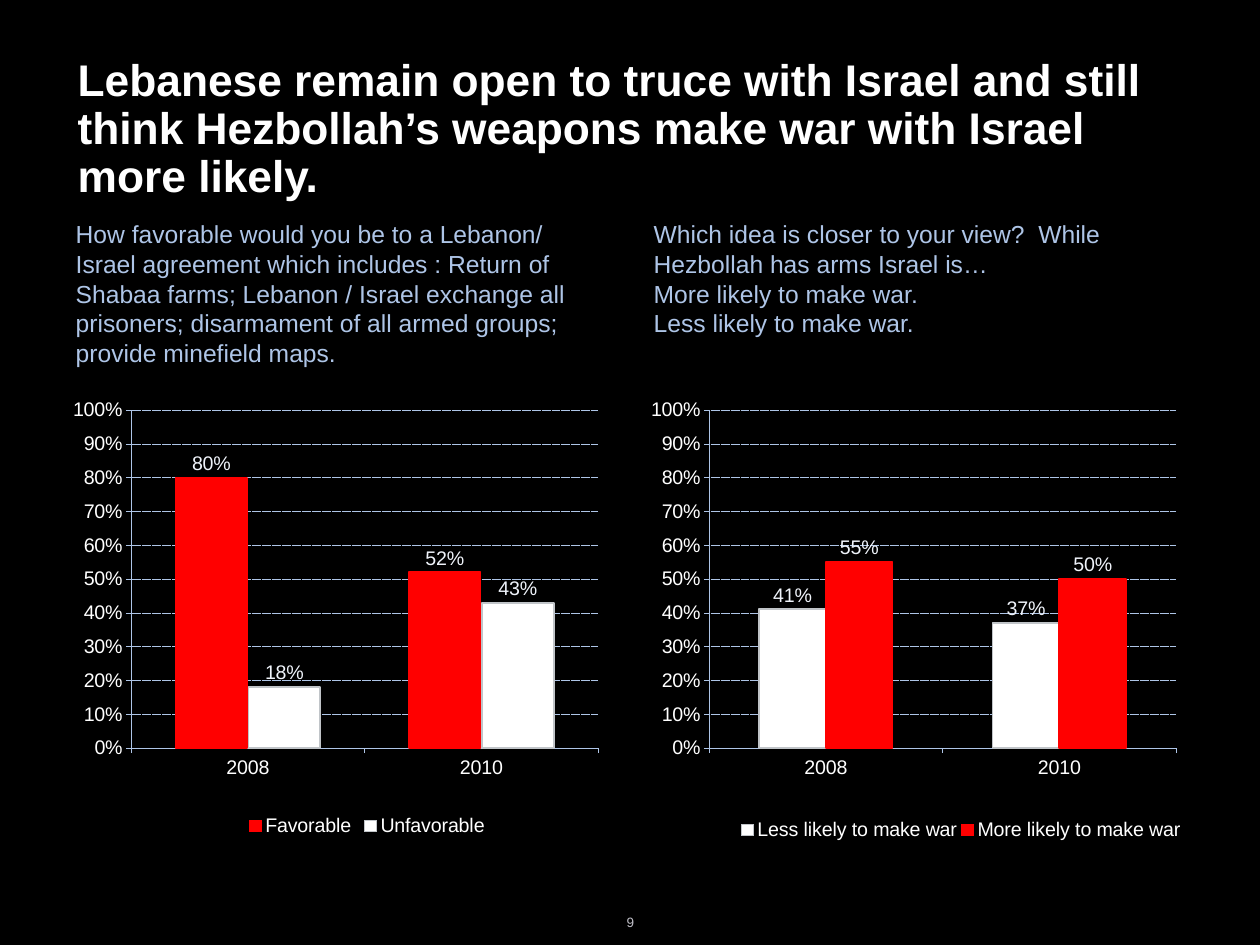
from dataclasses import dataclass

from lxml.etree import SubElement
from pptx import Presentation
from pptx.chart.data import CategoryChartData
from pptx.dml.color import RGBColor
from pptx.enum.chart import (XL_CHART_TYPE, XL_LABEL_POSITION, XL_LEGEND_POSITION,
                             XL_TICK_LABEL_POSITION, XL_TICK_MARK)
from pptx.enum.dml import MSO_LINE
from pptx.enum.text import PP_ALIGN
from pptx.oxml.ns import qn
from pptx.util import Pt

EMU_PER_PX = 10320


@dataclass(frozen=True)
class Theme:
    font: str = "Arial"
    background: str = "000000"
    white: str = "FFFFFF"
    red: str = "FF0000"
    pale_blue: str = "AEC5E7"
    white_outline: str = "C0C4C8"
    label: str = "EFF3FA"
    page_number: str = "BFBEC7"
    title_size: int = 36
    question_size: int = 20
    chart_size: int = 16
    page_size: int = 11


THEME = Theme()
OUTLINES = {THEME.white: THEME.white_outline, THEME.red: THEME.red}


def px(length):
    return int(length * EMU_PER_PX)


def style_font(font, size, color, bold=False):
    font.name = THEME.font
    font.size = Pt(size)
    font.bold = bold
    font.color.rgb = RGBColor.from_string(color)


def style_line(line, color, width):
    line.color.rgb = RGBColor.from_string(color)
    line.width = Pt(width)


def add_text(slide, box, paragraphs, size, color, bold=False, align=PP_ALIGN.LEFT,
             line_spacing=1.0, wrap=True):
    frame = slide.shapes.add_textbox(*map(px, box)).text_frame
    frame.word_wrap = wrap
    for index, text in enumerate(paragraphs):
        paragraph = frame.add_paragraph() if index else frame.paragraphs[0]
        paragraph.text = text
        paragraph.alignment = align
        paragraph.line_spacing = line_spacing
        for run in paragraph.runs:
            style_font(run.font, size, color, bold)


def set_layout(parent, position, box, frame, inner=False):
    for layout in parent.findall(qn("c:layout")):
        parent.remove(layout)
    layout = SubElement(parent, qn("c:layout"))
    parent.insert(position, layout)
    manual = SubElement(layout, qn("c:manualLayout"))
    if inner:
        SubElement(manual, qn("c:layoutTarget")).set("val", "inner")
    for name in ("xMode", "yMode"):
        SubElement(manual, qn(f"c:{name}")).set("val", "edge")
    for name, length, total in zip("xywh", box, frame * 2):
        SubElement(manual, qn(f"c:{name}")).set("val", f"{length / total:.4f}")


def style_axes(chart):
    for axis, width in ((chart.category_axis, 0.38), (chart.value_axis, 0.22)):
        style_font(axis.tick_labels.font, THEME.chart_size, THEME.white)
        style_line(axis.format.line, THEME.pale_blue, width)
        axis.major_tick_mark = XL_TICK_MARK.OUTSIDE
        axis.minor_tick_mark = XL_TICK_MARK.NONE
    chart.category_axis.tick_label_position = XL_TICK_LABEL_POSITION.LOW
    value_axis = chart.value_axis
    value_axis.minimum_scale, value_axis.maximum_scale = 0, 1
    value_axis.major_unit = 0.1
    value_axis.tick_labels.number_format = "0%"
    value_axis.tick_labels.number_format_is_linked = False
    gridline = value_axis.major_gridlines.format.line
    style_line(gridline, THEME.pale_blue, 0.22)
    gridline.dash_style = MSO_LINE.SQUARE_DOT


def style_series(series, color):
    series.format.fill.solid()
    series.format.fill.fore_color.rgb = RGBColor.from_string(color)
    style_line(series.format.line, OUTLINES[color], 1.5)
    series.invert_if_negative = False
    labels = series.data_labels
    labels.show_value = True
    labels.position = XL_LABEL_POSITION.OUTSIDE_END
    labels.number_format = "0%"
    labels.number_format_is_linked = False
    style_font(labels.font, THEME.chart_size, THEME.label)


def add_poll_chart(slide, box, answers, legend_box, gap, overlap):
    data = CategoryChartData(number_format="0%")
    data.categories = ["2008", "2010"]
    for name, values, color in answers:
        data.add_series(name, values)
    chart = slide.shapes.add_chart(
        XL_CHART_TYPE.COLUMN_CLUSTERED, *map(px, box), data).chart
    style_font(chart.font, THEME.chart_size, THEME.white)
    chart.has_title = False
    style_axes(chart)
    plot = chart.plots[0]
    plot.vary_by_categories = False
    plot.gap_width, plot.overlap = gap, overlap
    for series, (name, values, color) in zip(plot.series, answers):
        style_series(series, color)
    chart.has_legend = True
    legend = chart.legend
    legend.position = XL_LEGEND_POSITION.BOTTOM
    legend.include_in_layout = False
    style_font(legend.font, THEME.chart_size, THEME.white)
    frame = box[2:]
    chart_space = chart.element if hasattr(chart, "element") else chart._chartSpace
    set_layout(chart_space.find(".//" + qn("c:plotArea")), 0, (56, 11, 469, 338), frame, True)
    set_layout(chart_space.find(".//" + qn("c:legend")), 1, legend_box, frame)


def add_poll(slide, box, question, answers, legend_box, gap, overlap):
    left, top, width, height = box
    add_text(slide, (left, top, width, 164), question, THEME.question_size, THEME.pale_blue)
    add_poll_chart(slide, (left + 6, top + 184, 535, height - 184), answers,
                   legend_box, gap, overlap)


def add_title(slide, box):
    title = ("Lebanese remain open to truce with Israel and still think "
             "Hezbollah’s weapons make war with Israel \vmore likely.")
    add_text(slide, box, [title], THEME.title_size, THEME.white, bold=True, line_spacing=0.9)


def main():
    presentation = Presentation()
    presentation.slide_width, presentation.slide_height = px(1260), px(945)
    slide = presentation.slides.add_slide(presentation.slide_layouts[6])
    slide.background.fill.solid()
    slide.background.fill.fore_color.rgb = RGBColor.from_string(THEME.background)

    add_title(slide, (69, 54, 1123, 162))
    add_poll(
        slide, (67, 215, 546, 680),
        ["How favorable would you be to a Lebanon/ Israel agreement which includes : "
         "Return of Shabaa farms; Lebanon / Israel exchange all prisoners; "
         "disarmament of all armed groups; provide minefield maps."],
        [("Favorable", (0.8, 0.52), THEME.red),
         ("Unfavorable", (0.18, 0.43), THEME.white)],
        legend_box=(168, 414, 250, 26), gap=124, overlap=-2)
    add_poll(
        slide, (645, 215, 546, 680),
        ["Which idea is closer to your view?  While Hezbollah has arms Israel is…",
         "More likely to make war.",
         "Less likely to make war."],
        [("Less likely to make war", (0.41, 0.37), THEME.white),
         ("More likely to make war", (0.55, 0.5), THEME.red)],
        legend_box=(84, 418, 450, 26), gap=150, overlap=0)
    add_text(slide, (613, 910, 35, 26), ["9"], THEME.page_size, THEME.page_number,
             align=PP_ALIGN.CENTER, wrap=False)
    presentation.save("out.pptx")


if __name__ == "__main__":
    main()
